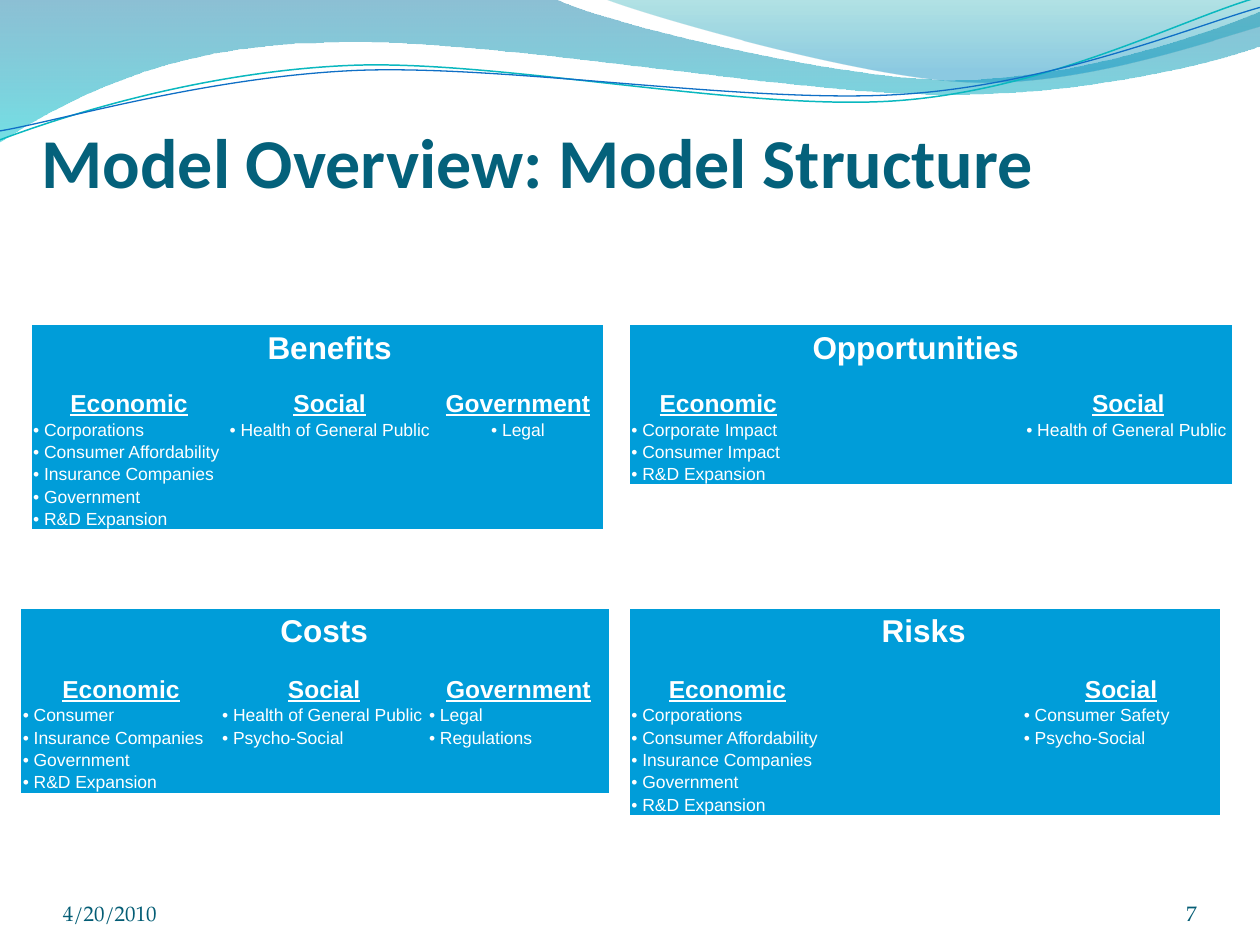
from lxml import etree
from pptx import Presentation
from pptx import util as u
from pptx.dml.color import RGBColor
from pptx.enum import text
from pptx.oxml.ns import qn

Cm, Pt = u.Cm, u.Pt
Align, Anchor = text.PP_ALIGN, text.MSO_ANCHOR
NO_TABLE_STYLE = "{2D5ABB26-0587-4C30-8999-92F81FD0307C}"


def rgb(hex_color):
    return RGBColor.from_string(hex_color)


def bend(shape, segments):
    lines = iter(list(shape._element.spPr.iter(qn("a:lnTo"))))
    for segment in segments:
        steps = [next(lines) for _ in segment]
        if len(segment) == 3:
            curve = etree.Element(qn("a:cubicBezTo"))
            steps[0].addprevious(curve)
            for step in steps:
                curve.append(step[0])
                step.getparent().remove(step)


class SlideBuilder:
    panel = "009DD9"
    white = "FFFFFF"
    title_color = "04617B"
    footer_color = "045D75"
    table_font = "Arial"
    title_font = "Calibri"
    footer_font = "TeX Gyre Pagella"
    title_row, gap_row, item_row = 0.82, 0.45, 0.45

    def __init__(self, slide):
        self.slide = slide

    def format(self, paragraph, face, size, color, bold=False, underline=False):
        font = paragraph.font
        font.name, font.size = face, Pt(size)
        font.bold, font.underline = bold, underline
        font.color.rgb = rgb(color)

    def freeform(self, start, segments, close):
        points = [(Cm(x), Cm(y)) for segment in segments for x, y in segment]
        builder = self.slide.shapes.build_freeform(*map(Cm, start))
        builder.add_line_segments(points, close=close)
        shape = builder.convert_to_shape()
        bend(shape, segments)
        shape.shadow.inherit = False
        return shape

    def wave(self, start, segments, stops):
        shape = self.freeform(start, segments, True)
        shape.line.fill.background()
        shape.fill.gradient()
        shape.fill.gradient_angle = 270
        for stop, (position, color, opacity) in zip(shape.fill.gradient_stops, stops):
            stop.position = position
            stop.color.rgb = rgb(color)
        tints = shape._element.spPr.iter(qn("a:srgbClr"))
        for tint, (position, color, opacity) in zip(tints, stops):
            etree.SubElement(tint, qn("a:alpha"), val=str(opacity * 1000))

    def ribbon(self, start, segments, color, width):
        shape = self.freeform(start, segments, False)
        shape.fill.background()
        shape.line.color.rgb = rgb(color)
        shape.line.width = Pt(width)

    def fill_frame(self, shape, words, box, top_inset, face, size, color, bold, align):
        shape.left, shape.top, shape.width, shape.height = map(Cm, box)
        frame = shape.text_frame
        frame.word_wrap = True
        frame.auto_size = text.MSO_AUTO_SIZE.NONE
        frame.vertical_anchor = Anchor.BOTTOM
        frame.margin_left = frame.margin_right = frame.margin_bottom = 0
        frame.margin_top = Cm(top_inset)
        frame.text = words
        paragraph = frame.paragraphs[0]
        paragraph.alignment = align
        self.format(paragraph, face, size, color, bold)

    def title(self, words, box):
        self.fill_frame(self.slide.shapes.title, words, box, 0.13,
                        self.title_font, 40, self.title_color, True, Align.LEFT)

    def footer(self, words, box, align):
        shape = self.slide.shapes.add_textbox(*map(Cm, box))
        self.fill_frame(shape, words, box, 0,
                        self.footer_font, 12, self.footer_color, False, align)

    def heading(self, cell, words, size, underline=False):
        cell.text = words
        paragraph = cell.text_frame.paragraphs[0]
        paragraph.alignment = Align.CENTER
        self.format(paragraph, self.table_font, size, self.white, True, underline)

    def item(self, cell, words, align):
        cell.text = f" {words}"
        paragraph = cell.text_frame.paragraphs[0]
        paragraph.alignment = align
        properties = paragraph._p.get_or_add_pPr()
        properties.set("marL", "0")
        properties.set("indent", "0")
        etree.SubElement(properties, qn("a:buFont"), typeface=self.table_font)
        etree.SubElement(properties, qn("a:buChar"), char="•")
        self.format(paragraph, self.table_font, 10, self.white)

    def blank_cell(self, cell):
        paragraph = cell.text_frame.paragraphs[0]
        ending = etree.SubElement(paragraph._p, qn("a:endParaRPr"), sz="1000")
        etree.SubElement(ending, qn("a:latin"), typeface=self.table_font)

    def merit_table(self, name, left, top, widths, heading_row, columns, aligns):
        item_count = max(len(items) for _, items in columns)
        heights = [self.title_row, self.gap_row, heading_row] + [self.item_row] * item_count
        table = self.slide.shapes.add_table(
            len(heights), len(widths), Cm(left), Cm(top),
            Cm(sum(widths)), Cm(sum(heights))).table
        table.first_row = table.horz_banding = False
        table._tbl.tblPr.find(qn("a:tableStyleId")).text = NO_TABLE_STYLE
        for column, width in zip(table.columns, widths):
            column.width = Cm(width)
        for row, height in zip(table.rows, heights):
            row.height = Cm(height)
        for cell in table.iter_cells():
            cell.fill.solid()
            cell.fill.fore_color.rgb = rgb(self.panel)
            cell.vertical_anchor = Anchor.BOTTOM
            cell.margin_left = cell.margin_right = cell.margin_top = Cm(0.03)
            cell.margin_bottom = 0
        self.heading(table.cell(0, 1), name, 18)
        for index, ((category, items), align) in enumerate(zip(columns, aligns)):
            if category:
                self.heading(table.cell(2, index), category, 14, True)
            for row, words in enumerate(items, 3):
                self.item(table.cell(row, index), words, align)
        for cell in table.iter_cells():
            if not cell.text:
                self.blank_cell(cell)


def main():
    deck = Presentation()
    deck.slide_width, deck.slide_height = Cm(25.4), Cm(19.05)
    page = SlideBuilder(deck.slides.add_slide(deck.slide_layouts[5]))

    page.wave((0, -0.03), [
        [(11.18, -0.03)],
        [(12.09, 0.43), (16.87, 1.6), (19.25, 1.6)],
        [(21.67, 1.6), (24.33, 0.66), (25.4, 0.23)],
        [(25.43, 0.91)],
        [(24.97, 1.12), (22.1, 1.93), (18.95, 1.9)],
        [(15.8, 1.9), (9.7, 0.71), (6.53, 0.86)],
        [(3.28, 0.89), (1.17, 2.11), (-0.03, 2.87)],
    ], [(0, "0074A1", 45), (1, "00C6CF", 55)])
    page.wave((12.17, -0.03), [
        [(12.93, 0.28), (17.32, 1.57), (19.53, 1.65)],
        [(21.74, 1.75), (24.41, 0.81), (25.4, 0.53)],
        [(25.4, 0)],
    ], [(0, "00A1A9", 30), (0.8, "008BBF", 45)])
    page.ribbon((0, 2.82), [
        [(1.22, 2.36), (4.01, 1.45), (7.04, 1.32)],
        [(10.03, 1.19), (15.06, 2.26), (18.11, 2.03)],
        [(21.16, 1.8), (23.83, 0.38), (25.35, -0.05)],
    ], "0AB8BF", 0.85)
    page.ribbon((0, 2.64), [
        [(1.19, 2.44), (4.17, 1.55), (7.19, 1.42)],
        [(10.24, 1.3), (15.16, 2.11), (18.21, 1.9)],
        [(21.23, 1.7), (24.05, 0.53), (25.4, 0.15)],
    ], "0F6FC6", 0.75)

    page.title("Model Overview: Model Structure", (0.84, 1.92, 22.86, 2.16))

    all_left = [Align.LEFT] * 3
    public_health = "Health of General Public"
    shared = ["Insurance Companies", "Government", "R&D Expansion"]
    stakeholders = ["Corporations", "Consumer Affordability"] + shared
    blank = ("", [])
    upper, lower, right = 6.56, 12.27, 12.7

    page.merit_table("Benefits", 0.64, upper, [3.92, 4.17, 3.42], 0.57, [
        ("Economic", stakeholders),
        ("Social", [public_health]),
        ("Government", ["Legal"]),
    ], [Align.LEFT, Align.CENTER, Align.CENTER])
    page.merit_table("Opportunities", right, upper, [3.56, 4.4, 4.17], 0.57, [
        ("Economic", ["Corporate Impact", "Consumer Impact", "R&D Expansion"]),
        blank,
        ("Social", [public_health]),
    ], all_left)
    page.merit_table("Costs", 0.43, lower, [4.02, 4.17, 3.66], 0.64, [
        ("Economic", ["Consumer"] + shared),
        ("Social", [public_health, "Psycho-Social"]),
        ("Government", ["Legal", "Regulations"]),
    ], all_left)
    page.merit_table("Risks", right, lower, [3.93, 3.98, 3.98], 0.64, [
        ("Economic", stakeholders),
        blank,
        ("Social", ["Consumer Safety", "Psycho-Social"]),
    ], all_left)

    page.footer("4/20/2010", (1.27, 17.65, 5.92, 1.02), Align.LEFT)
    page.footer("7", (22.02, 17.65, 2.11, 1.02), Align.RIGHT)
    deck.save("out.pptx")


if __name__ == "__main__":
    main()
